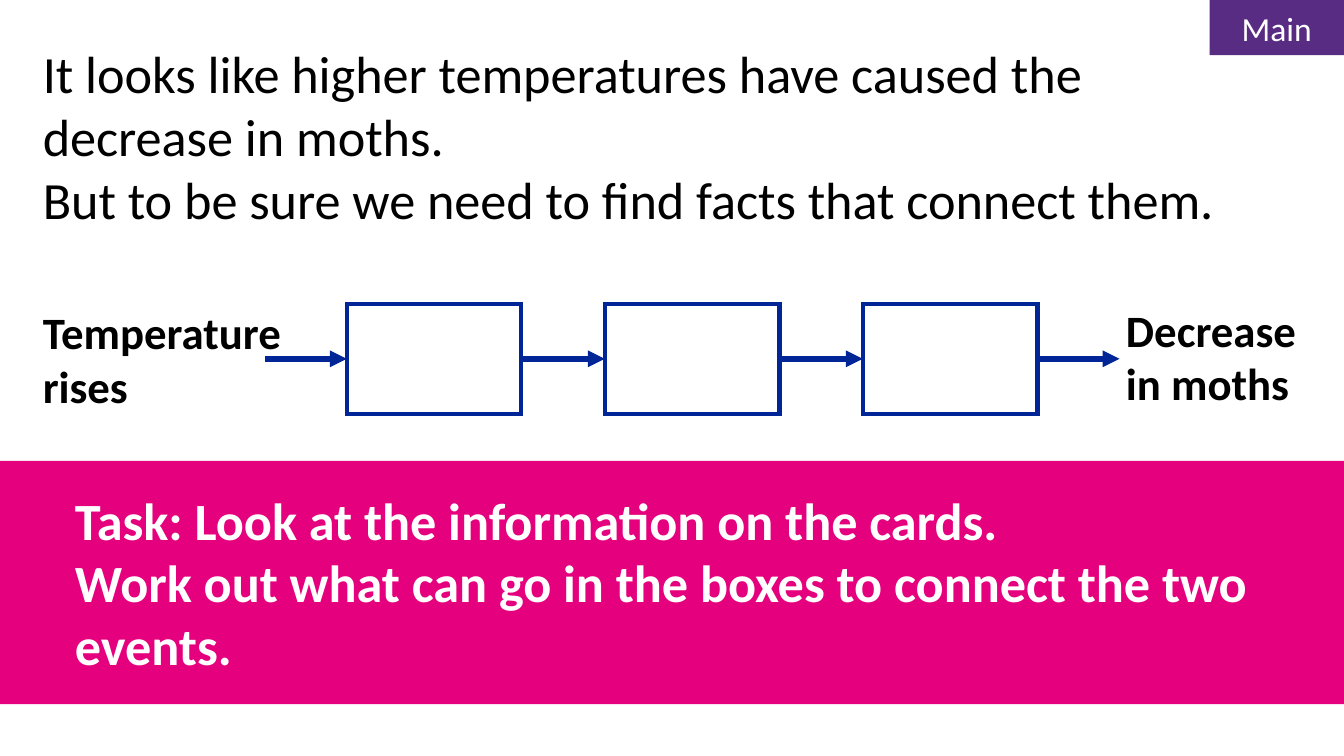
import pptx
import pptx.util
import pptx.dml.color
import pptx.enum.shapes
import pptx.enum.text
import pptx.oxml.ns
from lxml import etree

# Content: paragraphs, place (left, top, width, height), size, bold, colour
INTRO = (["It looks like higher temperatures have caused the decrease in moths.",
          "But to be sure we need to find facts that connect them."],
         (0.22, 0.26, 9.04, 1.51), 28, False, "000000")
TASK = (["Task: Look at the information on the cards.",
         "Work out what can go in the boxes to connect the two events."],
        (0.46, 3.58, 9.37, 1.51), 28, True, "FFFFFF")
CAUSE = (["Temperature rises"], (0.22, 2.22, 2.36, 0.91), 24, True, "000000")
EFFECT = (["Decrease in moths"], (8.28, 2.2, 1.56, 0.91), 24, True, "000000")
TAG = "Main"
PURPLE, PINK, BLUE = "582C83", "E5007E", "002596"

# Chain of empty boxes
BOX_COUNT, BOX_LEFT, BOX_TOP, BOX_WIDTH, BOX_HEIGHT = 3, 2.58, 2.26, 1.3, 0.82
BOX_STEP, ARROW_LENGTH = 1.92, 0.61

Inches, Pt, qn = pptx.util.Inches, pptx.util.Pt, pptx.oxml.ns.qn


def colour(hex_code):
    return pptx.dml.color.RGBColor.from_string(hex_code)


def write(frame, paragraphs, size, bold, hex_code):
    frame.word_wrap = True
    frame.text = "\n".join(paragraphs)
    for paragraph in frame.paragraphs:
        for run in paragraph.runs:
            run.font.name = "Calibri"
            run.font.size = Pt(size)
            run.font.bold = bold
            run.font.color.rgb = colour(hex_code)


def add_text(paragraphs, place, size, bold, hex_code):
    text_box = slide.shapes.add_textbox(*map(Inches, place))
    write(text_box.text_frame, paragraphs, size, bold, hex_code)


def style_line(shape, width, ending, **attributes):
    shape.line.color.rgb = colour(BLUE)
    shape.line.width = Pt(width)
    line = shape._element.spPr.find(qn("a:ln"))
    etree.SubElement(line, qn(ending), **attributes)


def add_rectangle(place, fill=None):
    rectangle = slide.shapes.add_shape(
        pptx.enum.shapes.MSO_SHAPE.RECTANGLE, *map(Inches, place))
    rectangle.shadow.inherit = False
    if fill:
        rectangle.fill.solid()
        rectangle.fill.fore_color.rgb = colour(fill)
        rectangle.line.fill.background()
    else:
        rectangle.fill.background()
        style_line(rectangle, 2.25, "a:miter", lim="800000")
    return rectangle


def add_arrow(start, end, y):
    arrow = slide.shapes.add_connector(
        pptx.enum.shapes.MSO_CONNECTOR.STRAIGHT,
        Inches(start), Inches(y), Inches(end), Inches(y))
    style_line(arrow, 3, "a:tailEnd", type="triangle")
    etree.SubElement(arrow._element.spPr, qn("a:effectLst"))
    return arrow


# Widescreen slide, 16:9
presentation = pptx.Presentation()
presentation.slide_width = Inches(10)
presentation.slide_height = Inches(10 * 9 / 16)
slide = presentation.slides.add_slide(presentation.slide_layouts[6])

# Introduction and corner tag
add_text(*INTRO)
tag = add_rectangle((9, 0, 1, 0.41), PURPLE)
write(tag.text_frame, [TAG], 18, False, "FFFFFF")
tag.text_frame.paragraphs[0].alignment = pptx.enum.text.PP_ALIGN.CENTER

# Task band
add_rectangle((0, 3.43, 10, 1.81), PINK)
add_text(*TASK)

# Cause and effect, with an arrow into each box and one out of the last
add_text(*CAUSE)
add_text(*EFFECT)
middle = BOX_TOP + BOX_HEIGHT / 2
previous_box = None
for i in range(BOX_COUNT):
    left = BOX_LEFT + i * BOX_STEP
    box = add_rectangle((left, BOX_TOP, BOX_WIDTH, BOX_HEIGHT))
    arrow = add_arrow(left - ARROW_LENGTH, left, middle)
    if previous_box:
        arrow.begin_connect(previous_box, 3)
    arrow.end_connect(box, 1)
    previous_box = box
chain_end = left + BOX_WIDTH
last_arrow = add_arrow(chain_end, chain_end + ARROW_LENGTH, middle)
last_arrow.begin_connect(previous_box, 3)

presentation.save("out.pptx")
